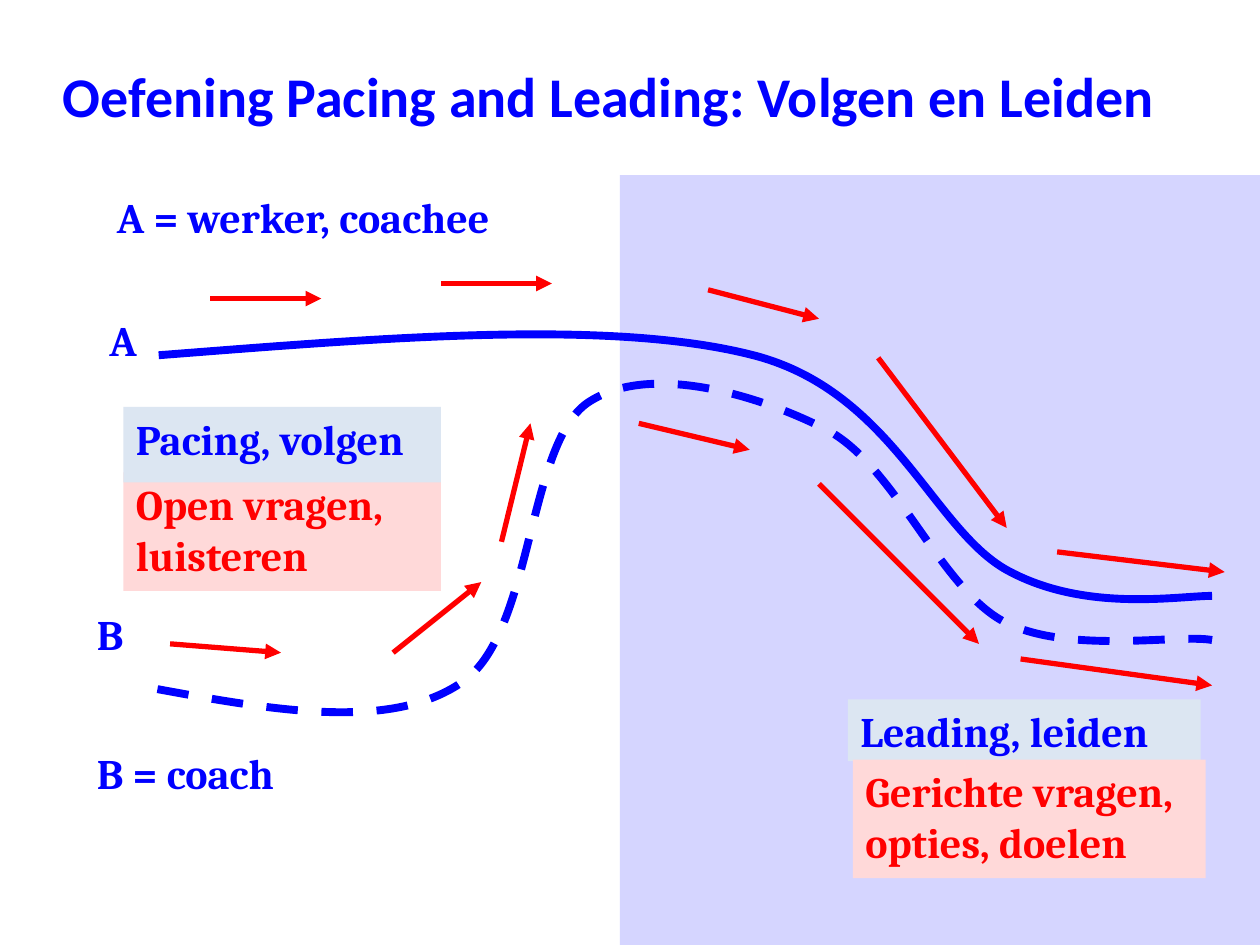
"""Build the Pacing and Leading exercise slide."""
from pptx import Presentation
from pptx.dml.color import RGBColor
from pptx.enum import dml, shapes, text
from pptx.oxml import xmlchemy
from pptx.util import Inches, Pt

BLUE = RGBColor(0x00, 0x00, 0xFF)
RED = RGBColor(0xFF, 0x00, 0x00)
WHITE = RGBColor(0xFF, 0xFF, 0xFF)
LAVENDER = RGBColor(0xD5, 0xD5, 0xFF)
PALE_BLUE = RGBColor(0xDC, 0xE6, 0xF2)
PINK = RGBColor(0xFF, 0xD9, 0xD9)

LABELS = [
    ("A", (0.77, 2.45, 0.59, 0.75), WHITE, BLUE),
    ("B", (0.67, 4.78, 0.59, 0.54), WHITE, BLUE),
    ("A = werker, coachee", (0.83, 1.47, 3.54, 0.55), WHITE, BLUE),
    ("B = coach", (0.67, 5.88, 2.52, 0.54), WHITE, BLUE),
    ("Open vragen, luisteren", (0.98, 3.75, 2.52, 0.94), PINK, RED),
    ("Pacing, volgen", (0.98, 3.23, 2.52, 0.6), PALE_BLUE, BLUE),
    ("Leading, leiden", (6.73, 5.55, 2.8, 0.49), PALE_BLUE, BLUE),
    ("Gerichte vragen, opties, doelen", (6.77, 6.03, 2.8, 0.94), PINK, RED),
]
COACHEE_CURVE = [
    (1.26, 2.82), (3.06, 2.68), (4.85, 2.53), (5.98, 2.82), (7.1, 3.11),
    (7.41, 4.23), (8.02, 4.54), (8.63, 4.86), (9.35, 4.73), (9.62, 4.73),
]
COACH_CURVE = [
    (1.25, 5.47), (2.18, 5.64), (3.1, 5.8), (3.66, 5.42), (4.23, 5.05),
    (4.18, 3.54), (4.66, 3.2), (5.14, 2.87), (6.01, 3.13), (6.56, 3.41),
    (7.11, 3.7), (7.45, 4.65), (7.96, 4.93), (8.47, 5.2), (9.35, 5.03),
    (9.62, 5.08),
]
COACHEE_ARROWS = [
    (1.67, 2.37, 2.55, 2.37), (3.5, 2.25, 4.38, 2.25),
    (5.62, 2.3, 6.5, 2.53), (6.97, 2.84, 7.99, 4.19),
    (8.39, 4.38, 9.72, 4.54),
]
COACH_ARROWS = [
    (1.35, 5.11, 2.23, 5.18), (3.12, 5.18, 3.82, 4.62),
    (3.98, 4.3, 4.21, 3.36), (5.07, 3.36, 5.95, 3.57),
    (6.5, 3.84, 7.77, 5.11), (8.1, 5.23, 9.62, 5.44),
]


def add_span(para, words, font, size, color):
    """Add one bold run to a paragraph."""
    span = para.add_run()
    span.text = words
    span.font.name = font
    span.font.size = Pt(size)
    span.font.bold = True
    span.font.color.rgb = color


def add_block(page, place, fill):
    """Add a plain filled rectangle."""
    block = page.shapes.add_shape(
        shapes.MSO_SHAPE.RECTANGLE, *map(Inches, place))
    block.shadow.inherit = False
    block.fill.solid()
    block.fill.fore_color.rgb = fill
    block.line.fill.background()
    return block


def add_label(page, words, place, fill, color):
    """Add a filled rectangle with text at its top left."""
    frame = add_block(page, place, fill).text_frame
    frame.word_wrap = True
    frame.vertical_anchor = text.MSO_ANCHOR.TOP
    para = frame.paragraphs[0]
    para.alignment = text.PP_ALIGN.LEFT
    para.space_after = Pt(10)
    add_span(para, words, "Cambria", 24, color)


def add_title(page, words):
    """Add the slide heading."""
    box = page.shapes.add_textbox(*map(Inches, (0.4, 0.44, 8.94, 0.64)))
    frame = box.text_frame
    frame.word_wrap = False
    frame.auto_size = text.MSO_AUTO_SIZE.SHAPE_TO_FIT_TEXT
    add_span(frame.paragraphs[0], words, "Calibri", 32, BLUE)


def add_arrow(page, ends):
    """Add a red arrow between two points."""
    arrow = page.shapes.add_connector(
        shapes.MSO_CONNECTOR.STRAIGHT, *map(Inches, ends))
    arrow.line.color.rgb = RED
    arrow.line.width = Pt(3)
    head = xmlchemy.OxmlElement("a:tailEnd")
    head.set("type", "triangle")
    arrow.line._get_or_add_ln().append(head)
    arrow._element.spPr.append(xmlchemy.OxmlElement("a:effectLst"))


def add_curve(page, points, dash=None):
    """Add an open Bezier curve through anchors and control points."""
    start, *rest = [(Inches(x), Inches(y)) for x, y in points]
    builder = page.shapes.build_freeform(*start)
    builder.add_line_segments(rest, close=False)
    curve = builder.convert_to_shape()
    segments = curve._element.xpath(".//a:lnTo")
    for first in range(0, len(segments), 3):
        bend = xmlchemy.OxmlElement("a:cubicBezTo")
        segments[first].addprevious(bend)
        for segment in segments[first:first + 3]:
            bend.append(segment[0])
            segment.getparent().remove(segment)
    curve.shadow.inherit = False
    curve.fill.background()
    curve.line.color.rgb = BLUE
    curve.line.width = Pt(4.5)
    if dash:
        curve.line.dash_style = dash


def main():
    """Build and save the deck."""
    deck = Presentation()
    deck.slide_width, deck.slide_height = Inches(10), Inches(7.5)
    page = deck.slides.add_slide(deck.slide_layouts[6])
    add_block(page, (4.92, 1.39, 5.08, 6.11), LAVENDER)
    add_title(page, "Oefening Pacing and Leading: Volgen en Leiden")
    for label in LABELS:
        add_label(page, *label)
    add_curve(page, COACHEE_CURVE)
    add_curve(page, COACH_CURVE, dml.MSO_LINE.DASH)
    for ends in COACHEE_ARROWS + COACH_ARROWS:
        add_arrow(page, ends)
    deck.save("out.pptx")


if __name__ == "__main__":
    main()
